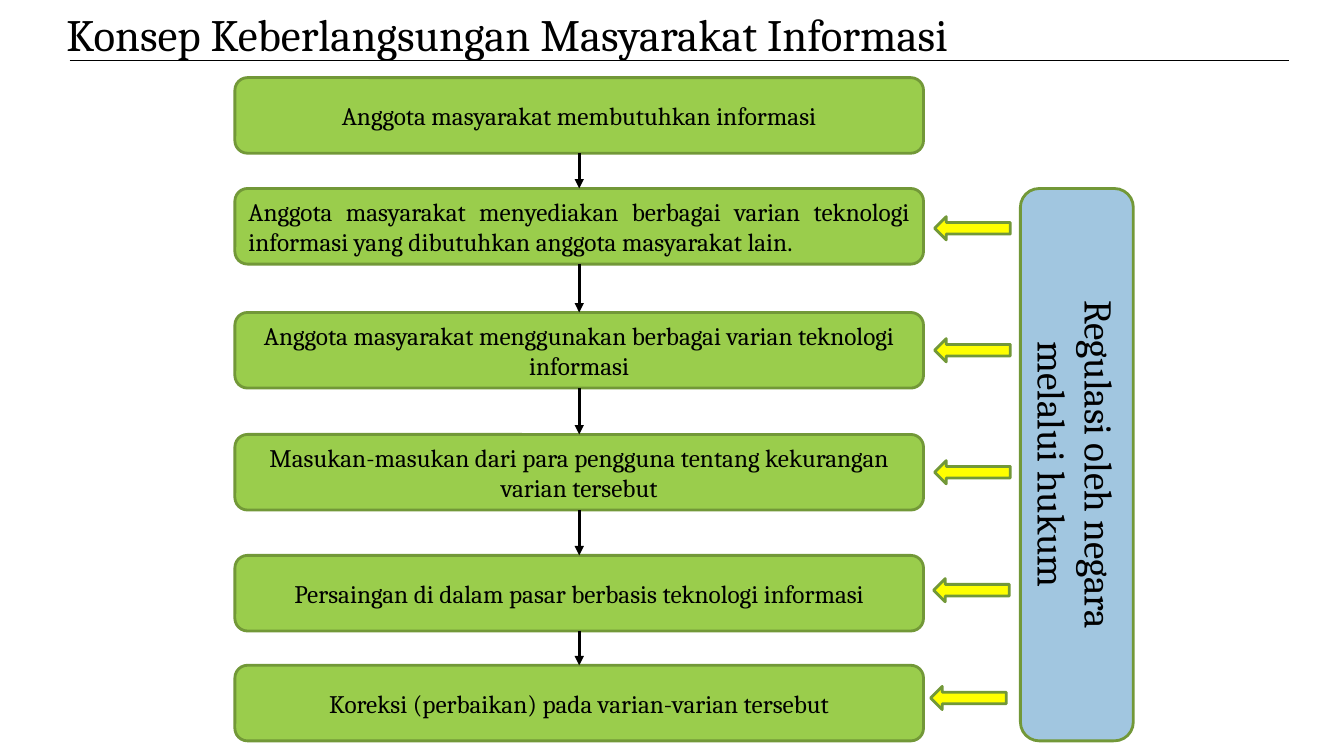
import pptx
import pptx.dml.color
import pptx.enum.shapes
import pptx.enum.text
import pptx.oxml
import pptx.oxml.ns
import pptx.util
from pptx.util import Inches

FONT = "Cambria"
BLACK, GREEN, DARK_GREEN = "000000", "9ACD4C", "729838"
BLUE, YELLOW = "A1C6E0", "FFFF00"
SHAPE = pptx.enum.shapes.MSO_SHAPE
ALIGN = pptx.enum.text.PP_ALIGN
STRAIGHT = pptx.enum.shapes.MSO_CONNECTOR.STRAIGHT

STEP_LEFT, STEP_WIDTH, STEP_HEIGHT = 2.33, 6.83, 0.75

# Each step: top, alignment, text
STEPS = [
    (0.77, ALIGN.CENTER, "Anggota masyarakat membutuhkan informasi"),
    (1.87, ALIGN.JUSTIFY, "Anggota masyarakat menyediakan berbagai varian teknologi "
                          "informasi yang dibutuhkan anggota masyarakat lain."),
    (3.10, ALIGN.CENTER, "Anggota masyarakat menggunakan berbagai varian teknologi informasi"),
    (4.31, ALIGN.CENTER, "Masukan-masukan dari para pengguna tentang kekurangan varian tersebut"),
    (5.51, ALIGN.CENTER, "Persaingan di dalam pasar berbasis teknologi informasi"),
    (6.60, ALIGN.CENTER, "Koreksi (perbaikan) pada varian-varian tersebut"),
]

# Left and top of each regulation arrow
REGULATION_ARROWS = [(9.27, 2.15), (9.27, 3.36), (9.27, 4.57), (9.26, 5.74), (9.23, 6.81)]


def color(value):
    return pptx.dml.color.RGBColor.from_string(value)


def write(shape, lines, size, align):
    frame = shape.text_frame
    frame.word_wrap = True
    for index, line in enumerate(lines):
        para = frame.paragraphs[0] if index == 0 else frame.add_paragraph()
        para.text = line
        para.alignment = align
        para.font.name = FONT
        para.font.size = pptx.util.Pt(size)
        para.font.color.rgb = color(BLACK)


def add_title(page, text):
    box = page.shapes.add_textbox(Inches(0.56), Inches(0.02), Inches(12.43), Inches(0.58))
    write(box, [text], 32, ALIGN.LEFT)


def add_block(page, preset, left, top, width, height, fill):
    block = page.shapes.add_shape(preset, Inches(left), Inches(top), Inches(width), Inches(height))
    block.shadow.inherit = False
    block.fill.solid()
    block.fill.fore_color.rgb = color(fill)
    block.line.color.rgb = color(DARK_GREEN)
    block.line.width = pptx.util.Pt(2)
    block.text_frame.vertical_anchor = pptx.enum.text.MSO_ANCHOR.MIDDLE
    return block


def add_line(page, start, end, width):
    line = page.shapes.add_connector(STRAIGHT, *(Inches(value) for value in start + end))
    line.line.color.rgb = color(BLACK)
    line.line.width = pptx.util.Pt(width)
    line._element.spPr.append(pptx.oxml.parse_xml(
        f'<a:effectLst {pptx.oxml.ns.nsdecls("a")}/>'))
    return line


def add_step_arrow(page, upper, lower):
    arrow = add_line(page, (0, 0), (0, 0), 2.25)
    arrow.begin_connect(upper, 2)
    arrow.end_connect(lower, 0)
    arrow.line._get_or_add_ln().append(pptx.oxml.parse_xml(
        f'<a:tailEnd {pptx.oxml.ns.nsdecls("a")} type="triangle"/>'))


def main():
    deck = pptx.Presentation()
    deck.slide_width, deck.slide_height = Inches(13.33), Inches(7.5)
    page = deck.slides.add_slide(deck.slide_layouts[6])

    # Title with rule
    add_title(page, "Konsep Keberlangsungan Masyarakat Informasi")
    add_line(page, (0.69, 0.6), (12.78, 0.6), 0.75)

    # Chain of steps
    steps = []
    for top, align, text in STEPS:
        step = add_block(page, SHAPE.ROUNDED_RECTANGLE, STEP_LEFT, top,
                         STEP_WIDTH, STEP_HEIGHT, GREEN)
        write(step, [text], 18, align)
        steps.append(step)
    for upper, lower in zip(steps, steps[1:]):
        add_step_arrow(page, upper, lower)

    # Regulation panel, turned on its side
    panel = add_block(page, SHAPE.ROUNDED_RECTANGLE, 7.94, 4.05, 5.48, 1.12, BLUE)
    panel.rotation = 90
    write(panel, ["Regulasi oleh negara", "melalui hukum"], 28, ALIGN.CENTER)

    # Arrows from regulation to the steps
    for left, top in REGULATION_ARROWS:
        add_block(page, SHAPE.LEFT_ARROW, left, top, 0.75, 0.23, YELLOW)

    deck.save("out.pptx")


if __name__ == "__main__":
    main()
